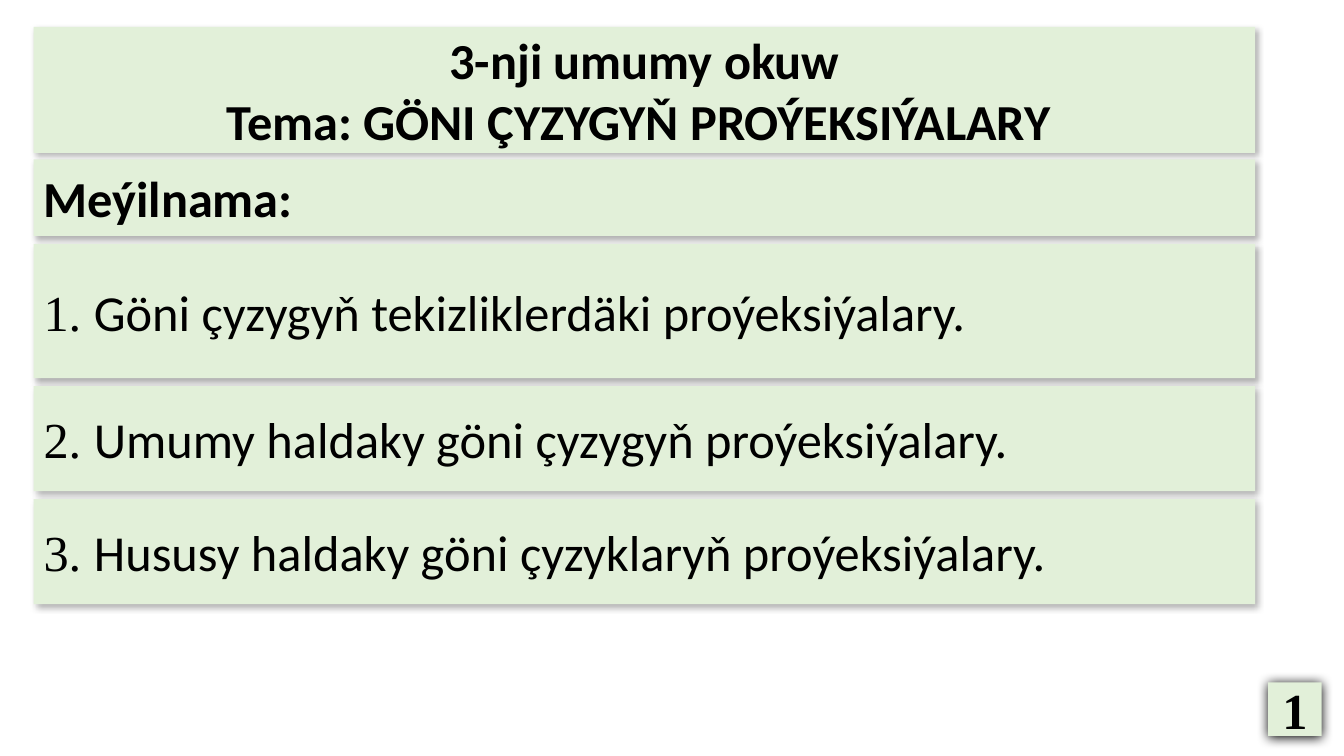
from dataclasses import dataclass

from lxml import etree
from pptx import Presentation
from pptx.dml.color import RGBColor
from pptx.enum import shapes, text
from pptx.oxml import ns
from pptx.util import Pt

TITLE = ["3-nji umumy okuw", "Tema: GÖNI ÇYZYGYŇ PROÝEKSIÝALARY "]
AGENDA_HEADING = "Meýilnama:"
AGENDA = [  # topic, bar height
    ("Göni çyzygyň tekizliklerdäki proýeksiýalary.", 95.8),
    ("Umumy haldaky göni çyzygyň proýeksiýalary.", 74.9),
    ("Hususy haldaky göni çyzyklaryň proýeksiýalary.", 74.9),
]
PAGE_NUMBER = "1"

LEFT, WIDTH, GAP = 24, 872.6, 5.8
TITLE_TOP, TITLE_HEIGHT, TITLE_ROUNDING = 19.2, 90, 0.184
HEADING_TOP, HEADING_HEIGHT = 113.8, 54.7
PAGE_BOX = (905.8, 487.4, 38.2, 38.2)


@dataclass(frozen=True)
class Theme:
    panel: RGBColor = RGBColor(0xE2, 0xF0, 0xD9)
    ink: RGBColor = RGBColor(0, 0, 0)
    body_font: str = "Calibri"
    number_font: str = "Times New Roman"
    size: float = 36
    # shadow: opacity %, blur pt, distance pt, angle in degrees
    soft_shadow: tuple = (30, 4.5, 2.6, 53)
    strong_shadow: tuple = (100, 8.5, 1, 90)


theme = Theme()


def add_shadow(panel, opacity, blur, distance, angle):
    panel.shadow.inherit = False
    effects = panel.element.spPr.find(ns.qn("a:effectLst"))
    outer = etree.SubElement(effects, ns.qn("a:outerShdw"), blurRad=str(Pt(blur)),
                             dist=str(Pt(distance)), dir=str(angle * 60000),
                             algn="ctr", rotWithShape="0")
    color = etree.SubElement(outer, ns.qn("a:srgbClr"), val=str(theme.ink))
    etree.SubElement(color, ns.qn("a:alpha"), val=str(opacity * 1000))


def style_panel(panel, shadow):
    panel.fill.solid()
    panel.fill.fore_color.rgb = theme.panel
    panel.line.fill.background()
    add_shadow(panel, *shadow)
    frame = panel.text_frame
    frame.word_wrap = True
    frame.auto_size = text.MSO_AUTO_SIZE.NONE
    frame.vertical_anchor = text.MSO_ANCHOR.MIDDLE


def style_run(run, font, bold):
    run.font.name = font
    run.font.size = Pt(theme.size)
    run.font.bold = bold
    run.font.color.rgb = theme.ink


def add_panel(slide, box, pieces, shadow=theme.soft_shadow, bold=False,
              align=text.PP_ALIGN.LEFT):
    """Add a one-line panel; pieces are (wording, font) pairs."""
    panel = slide.shapes.add_shape(shapes.MSO_SHAPE.RECTANGLE, *map(Pt, box))
    style_panel(panel, shadow)
    paragraph = panel.text_frame.paragraphs[0]
    paragraph.alignment = align
    for wording, font in pieces:
        run = paragraph.add_run()
        run.text = wording
        style_run(run, font, bold)


def fill_title(title):
    title.left, title.top = Pt(LEFT), Pt(TITLE_TOP)
    title.width, title.height = Pt(WIDTH), Pt(TITLE_HEIGHT)
    outline = etree.Element(ns.qn("a:prstGeom"), prst="roundRect")
    guides = etree.SubElement(outline, ns.qn("a:avLst"))
    etree.SubElement(guides, ns.qn("a:gd"), name="adj",
                     fmla=f"val {round(TITLE_ROUNDING * 100000)}")
    title.element.spPr.insert(1, outline)
    style_panel(title, theme.soft_shadow)
    title.text_frame.text = "\n".join(TITLE)
    for paragraph in title.text_frame.paragraphs:
        paragraph.alignment = text.PP_ALIGN.CENTER
        style_run(paragraph.runs[0], theme.body_font, True)


def main():
    deck = Presentation()
    deck.slide_width, deck.slide_height = Pt(960), Pt(540)
    slide = deck.slides.add_slide(deck.slide_layouts[5])
    fill_title(slide.shapes.title)

    add_panel(slide, (LEFT, HEADING_TOP, WIDTH, HEADING_HEIGHT),
              [(AGENDA_HEADING, theme.body_font)], bold=True)
    top = HEADING_TOP + HEADING_HEIGHT + GAP
    for number, (topic, height) in enumerate(AGENDA, 1):
        add_panel(slide, (LEFT, top, WIDTH, height),
                  [(f"{number}. ", theme.number_font), (topic, theme.body_font)])
        top += height + GAP

    add_panel(slide, PAGE_BOX, [(PAGE_NUMBER, theme.number_font)],
              theme.strong_shadow, bold=True, align=text.PP_ALIGN.CENTER)
    deck.save("out.pptx")


if __name__ == "__main__":
    main()
